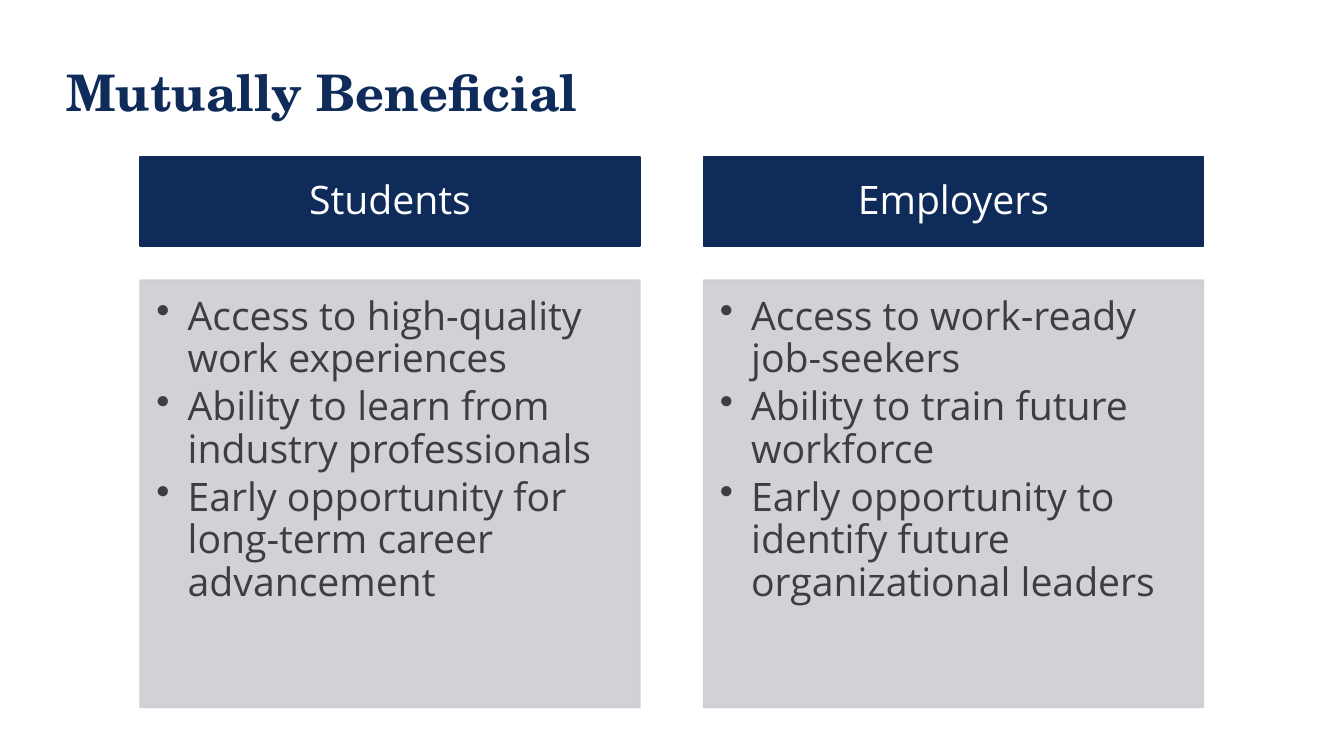
from lxml import etree
from pptx import Presentation
from pptx import util as u
from pptx.dml import color
from pptx.enum import shapes, text
from pptx.oxml import ns

NAVY, GREY, INK, WHITE = "0E2B5A", "CCCDD2", "3C3E40", "FFFFFF"
COLUMNS = {
    "Students": [
        "Access to high-quality work experiences",
        "Ability to learn from industry professionals",
        "Early opportunity for long-term career advancement",
    ],
    "Employers": [
        "Access to work-ready job-seekers",
        "Ability to train future workforce",
        "Early opportunity to identify future organizational leaders",
    ],
}


def paint(target, value):
    """Give a colour format the colour of a hex string."""
    target.rgb = color.RGBColor.from_string(value)


def assign(target, values):
    """Set attributes from a dict of format values."""
    for name, value in values.items():
        setattr(target, name, value)


def set_frame(box, anchor, insets):
    """Wrap the text of a box, anchor it and set its insets in cm."""
    sides = ("margin_left", "margin_top", "margin_right", "margin_bottom")
    margins = {side: u.Cm(inset) for side, inset in zip(sides, insets)}
    assign(box.text_frame, {"word_wrap": True, "vertical_anchor": anchor, **margins})


def write(para, words, value, font, layout):
    """Write one formatted span into a paragraph."""
    assign(para, layout)
    span = para.add_run()
    span.text = words
    assign(span.font, font)
    paint(span.font.color, value)


def add_bullet(para):
    """Give a paragraph a round bullet and a hanging indent."""
    props = para._p.get_or_add_pPr()
    assign_indent = {"marL": u.Cm(0.79), "indent": -u.Cm(0.79)}
    for name, length in assign_indent.items():
        props.set(name, str(int(length)))
    etree.SubElement(props, ns.qn("a:buChar"), char="•")


def add_block(page, left, top, width, height, value, opacity=100):
    """Add a filled and outlined rectangle."""
    block = page.shapes.add_shape(
        shapes.MSO_SHAPE.RECTANGLE, u.Cm(left), u.Cm(top), u.Cm(width), u.Cm(height))
    block.shadow.inherit = False
    block.fill.solid()
    block.line.width = u.Pt(1)
    for target in (block.fill.fore_color, block.line.color):
        paint(target, value)
    if opacity < 100:
        for tint in block._element.spPr.iter(ns.qn("a:srgbClr")):
            etree.SubElement(tint, ns.qn("a:alpha"), val=str(opacity * 1000))
    return block


def add_title(page, words, left, top, width, height):
    """Place the slide title in its box."""
    box = page.shapes.add_textbox(u.Cm(left), u.Cm(top), u.Cm(width), u.Cm(height))
    set_frame(box, text.MSO_ANCHOR.MIDDLE, (0.25, 0.13, 0.25, 0.13))
    font = {"name": "TeX Gyre Schola", "size": u.Pt(36), "bold": True}
    write(box.text_frame.paragraphs[0], words, NAVY, font, {})


def add_column(page, heading, points, left, top, width, height):
    """Place a heading bar above a panel of bulleted points."""
    font = {"name": "Open Sans", "size": u.Pt(28)}
    bar_height, gap = 2.24, 0.86
    bar = add_block(page, left, top, width, bar_height, NAVY)
    set_frame(bar, text.MSO_ANCHOR.MIDDLE, (0.56, 0.3, 0.56, 0.3))
    write(bar.text_frame.paragraphs[0], heading, WHITE, font,
          {"alignment": text.PP_ALIGN.CENTER, "line_spacing": 0.9})

    offset = bar_height + gap
    panel = add_block(page, left, top + offset, width, height - offset, GREY, 90)
    set_frame(panel, text.MSO_ANCHOR.TOP, (0.41, 0.41, 0.56, 0.61))
    layout = {"alignment": text.PP_ALIGN.LEFT, "level": 1,
              "line_spacing": 0.9, "space_after": u.Pt(4.2)}
    frame = panel.text_frame
    for index, point in enumerate(points):
        para = frame.add_paragraph() if index else frame.paragraphs[0]
        add_bullet(para)
        write(para, point, INK, font, layout)


def main():
    """Build the slide and save the deck."""
    deck = Presentation()
    assign(deck, {"slide_width": u.Cm(33.87), "slide_height": u.Cm(19.05)})
    page = deck.slides.add_slide(deck.slide_layouts[6])
    add_title(page, "Mutually Beneficial", 1.42, 0.64, 25.43, 3.35)
    for index, (heading, points) in enumerate(COLUMNS.items()):
        add_column(page, heading, points, 3.53 + index * 14.2, 3.96, 12.6, 13.87)
    deck.save("out.pptx")


if __name__ == "__main__":
    main()
